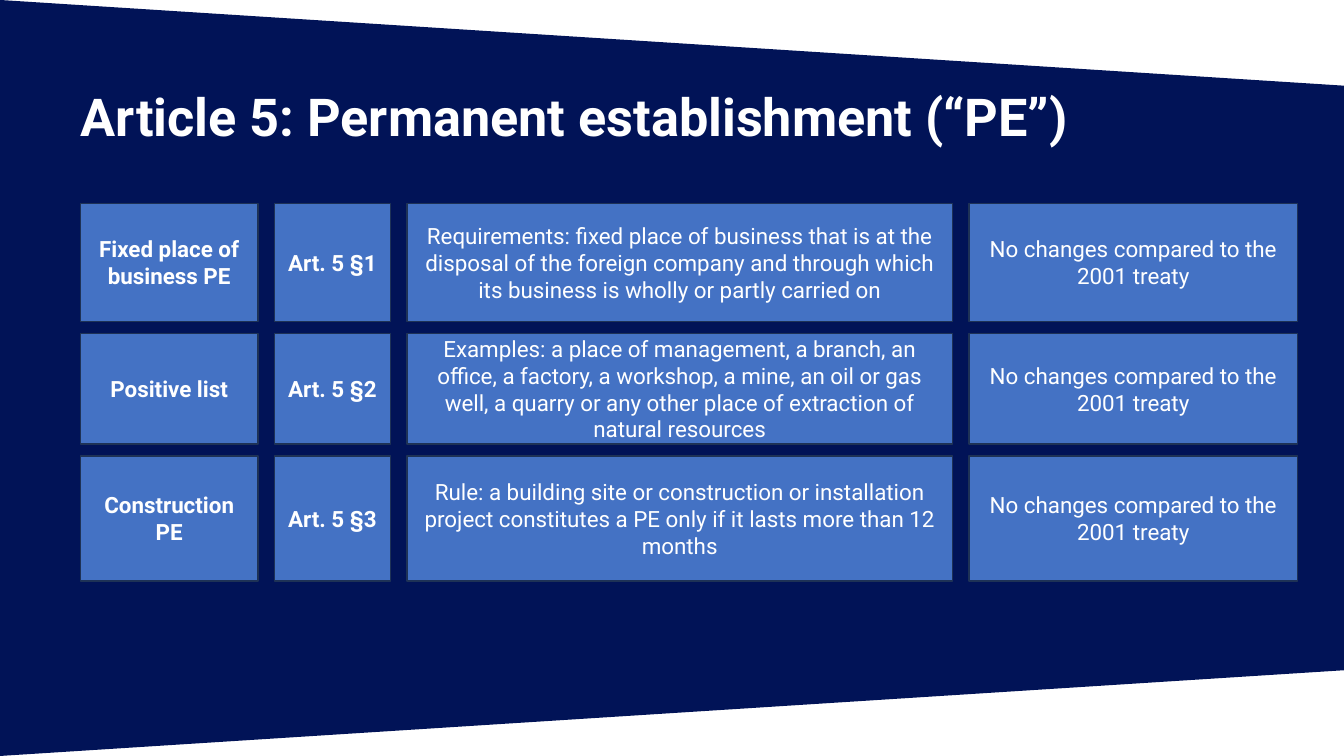
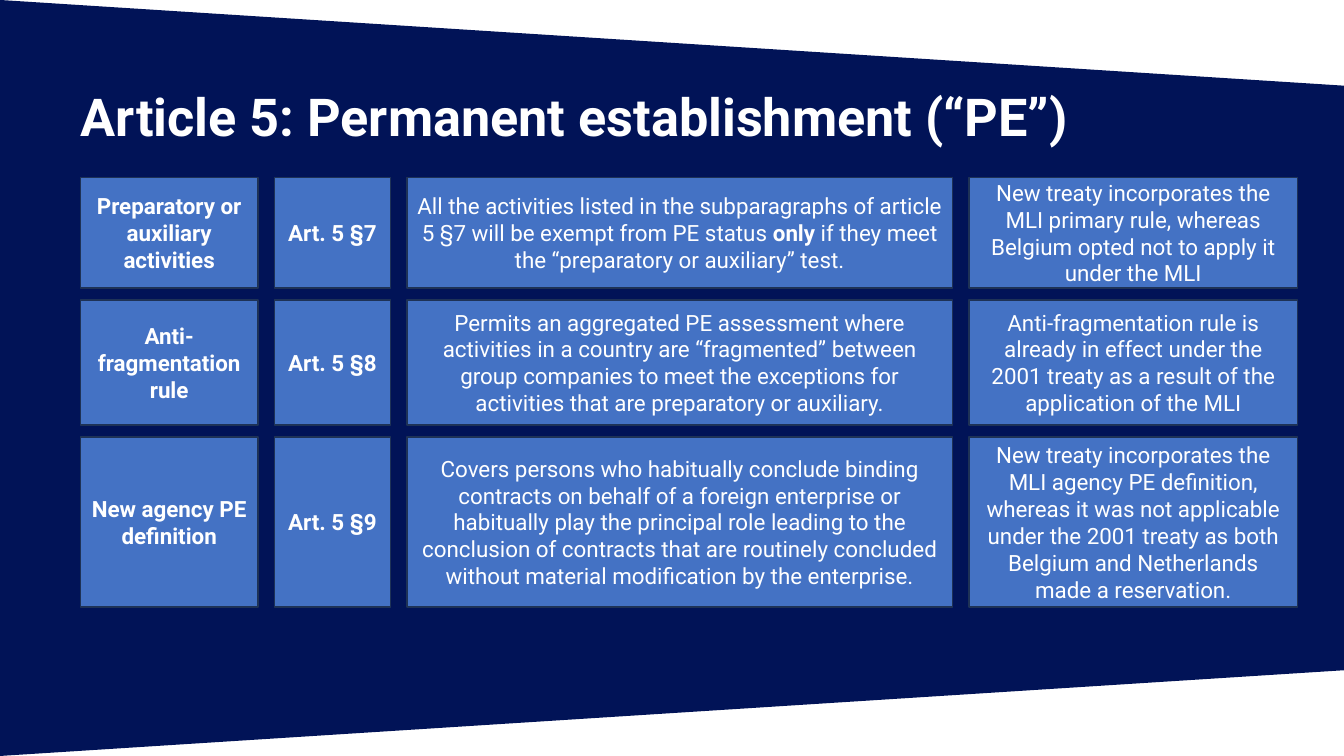
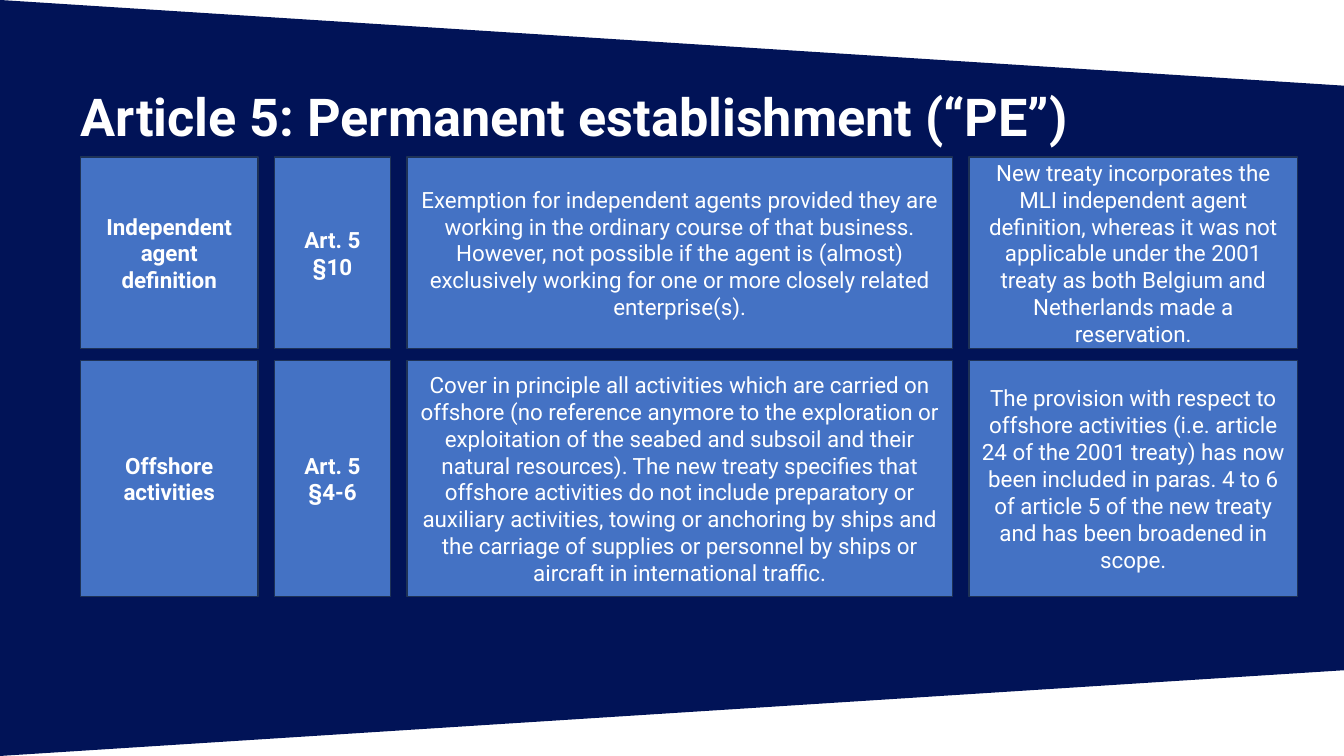
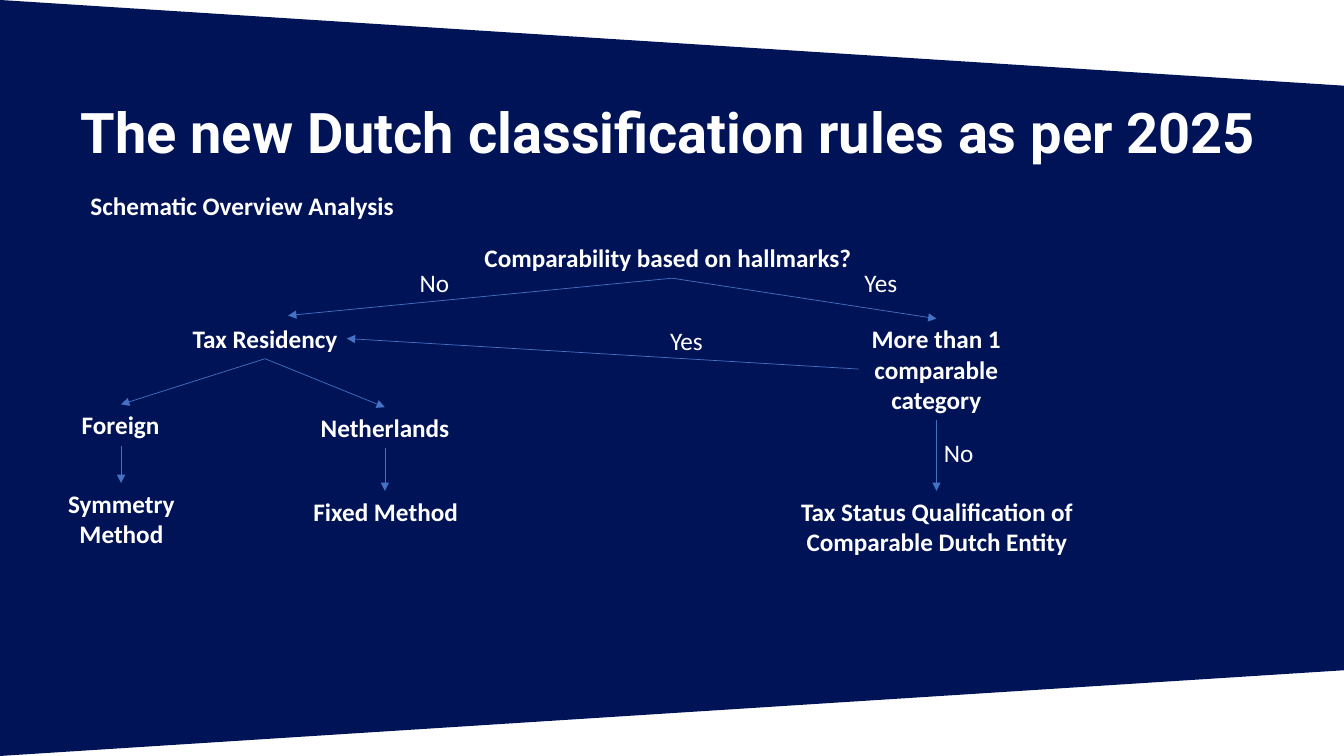
from dataclasses import dataclass

from pptx import Presentation
from pptx.dml.color import RGBColor as RGB
from pptx.enum.shapes import MSO_CONNECTOR as CONN, MSO_SHAPE as SHAPE
from pptx.enum.text import MSO_ANCHOR as ANCHOR, MSO_AUTO_SIZE as FIT, PP_ALIGN as ALIGN
from pptx.oxml.ns import qn
from pptx.oxml.xmlchemy import OxmlElement
from pptx.util import Cm, Pt


@dataclass
class Theme:
    navy = RGB.from_string("011357")
    blue = RGB.from_string("4472C4")
    edge = RGB.from_string("1E3256")
    white = RGB.from_string("FFFFFF")
    font = "Roboto"
    chart_font = "Calibri"
    article_title = 37.3
    rules_title = 40
    title_line = 40
    cell = 16
    label = 18


theme = Theme()


def write(sp, text, size=theme.cell, font=theme.font, bold=False, align=ALIGN.CENTER,
          anchor=ANCHOR.MIDDLE, line=None, inset=None):
    tf = sp.text_frame
    tf.word_wrap = True
    tf.auto_size = FIT.NONE
    tf.vertical_anchor = anchor
    if inset is not None:
        tf.margin_left = tf.margin_right = tf.margin_top = tf.margin_bottom = inset
    p = tf.paragraphs[0]
    p.alignment = align
    if line:
        p.line_spacing = Pt(line)
    for i, part in enumerate(text.split("**")):
        r = p.add_run()
        r.text = part
        r.font.name = font
        r.font.size = Pt(size)
        r.font.bold = bold or i % 2 == 1
        r.font.color.rgb = theme.white


def add_slide(title, size, top):
    s = prs.slides.add_slide(layout)
    sp = s.shapes.title
    sp.left, sp.top, sp.width, sp.height = Cm(2.03), Cm(top), Cm(30.66), Cm(3.68)
    write(sp, title, size=size, bold=True, align=ALIGN.LEFT, anchor=ANCHOR.BOTTOM,
          line=theme.title_line, inset=0)
    return s


prs = Presentation()
prs.slide_width, prs.slide_height = Cm(33.87), Cm(19.05)
layout = prs.slide_layouts[5]

unchanged = "No changes compared to the 2001 treaty"
article_slides = [
    (5.13, [
        (2.97, "Fixed place of business PE", "Art. 5 §1",
         "Requirements: fixed place of business that is at the disposal of the foreign company "
         "and through which its business is wholly or partly carried on",
         unchanged),
        (2.79, "Positive list", "Art. 5 §2",
         "Examples: a place of management, a branch, an office, a factory, a workshop, a mine, "
         "an oil or gas well, a quarry or any other place of extraction of natural resources",
         unchanged),
        (3.15, "Construction PE", "Art. 5 §3",
         "Rule: a building site or construction or installation project constitutes a PE only "
         "if it lasts more than 12 months",
         unchanged),
    ]),
    (4.47, [
        (2.79, "Preparatory or auxiliary activities", "Art. 5 §7",
         "All the activities listed in the subparagraphs of article 5 §7 will be exempt from PE "
         "status **only** if they meet the “preparatory or auxiliary” test.",
         "New treaty incorporates the MLI primary rule, whereas Belgium opted not to apply it "
         "under the MLI"),
        (3.15, "Anti-fragmentation rule", "Art. 5 §8",
         "Permits an aggregated PE assessment where activities in a country are “fragmented” "
         "between group companies to meet the exceptions for activities that are preparatory "
         "or auxiliary.",
         "Anti-fragmentation rule is already in effect under the 2001 treaty as a result of the "
         "application of the MLI"),
        (4.29, "New agency PE definition", "Art. 5 §9",
         "Covers persons who habitually conclude binding contracts on behalf of a foreign "
         "enterprise or habitually play the principal role leading to the conclusion of "
         "contracts that are routinely concluded without material modification by the "
         "enterprise.",
         "New treaty incorporates the MLI agency PE definition, whereas it was not applicable "
         "under the 2001 treaty as both Belgium and Netherlands made a reservation."),
    ]),
    (3.96, [
        (4.83, "Independent agent definition", "Art. 5 §10",
         "Exemption for independent agents provided they are working in the ordinary course of "
         "that business. However, not possible if the agent is (almost) exclusively working "
         "for one or more closely related enterprise(s).",
         "New treaty incorporates the MLI independent agent definition, whereas it was not "
         "applicable under the 2001 treaty as both Belgium and Netherlands made a reservation."),
        (5.94, "Offshore activities", "Art. 5 §4-6",
         "Cover in principle all activities which are carried on offshore (no reference anymore "
         "to the exploration or exploitation of the seabed and subsoil and their natural "
         "resources). The new treaty specifies that offshore activities do not include "
         "preparatory or auxiliary activities, towing or anchoring by ships and the carriage of "
         "supplies or personnel by ships or aircraft in international traffic.",
         "The provision with respect to offshore activities (i.e. article 24 of the 2001 treaty) "
         "has now been included in paras. 4 to 6 of article 5 of the new treaty and has been "
         "broadened in scope."),
    ]),
]
col_widths = [4.47, 2.92, 13.74, 8.28]
col_gap, row_gap = 0.42, 0.3

for top, rows in article_slides:
    s = add_slide("Article 5: Permanent establishment (“PE”)", theme.article_title, 0.03)
    for height, *cells in rows:
        left = 2.03
        for col, (width, text) in enumerate(zip(col_widths, cells)):
            sp = s.shapes.add_shape(SHAPE.RECTANGLE, Cm(left), Cm(top), Cm(width), Cm(height))
            sp.shadow.inherit = False
            sp.fill.solid()
            sp.fill.fore_color.rgb = theme.blue
            sp.line.color.rgb = theme.edge
            sp.line.width = Pt(1)
            write(sp, text, bold=col < 2)
            left += width + col_gap
        top += height + row_gap

s = add_slide("The new Dutch classification rules as per 2025", theme.rules_title, 0.46)

arrows = [
    (16.94, 7.01, 7.26, 7.95),
    (16.94, 7.01, 23.6, 8.03),
    (21.64, 9.3, 8.74, 8.53),
    (6.68, 9.04, 3.05, 10.19),
    (6.68, 9.04, 9.7, 10.26),
    (3.05, 11.23, 3.05, 12.17),
    (9.7, 11.28, 9.7, 12.37),
    (23.6, 10.59, 23.6, 12.37),
]
for points in arrows:
    c = s.shapes.add_connector(CONN.STRAIGHT, *[Cm(v) for v in points])
    c.line.color.rgb = theme.blue
    c.line.width = Pt(0.5)
    tip = OxmlElement("a:tailEnd")
    tip.set("type", "triangle")
    c.element.spPr.find(qn("a:ln")).append(tip)
    c.element.spPr.append(OxmlElement("a:effectLst"))

labels = [
    ("Schematic Overview Analysis", 2.03, 4.67, 26.09, 1.02, True, ALIGN.LEFT),
    ("Comparability based on hallmarks?", 11.96, 5.99, 9.96, 1.02, True, ALIGN.LEFT),
    ("No", 9.78, 6.6, 2.34, 1.02, False, ALIGN.CENTER),
    ("Yes", 21.03, 6.6, 2.34, 1.02, False, ALIGN.CENTER),
    ("Tax Residency", 1.7, 8.03, 9.96, 1.02, True, ALIGN.CENTER),
    ("Yes", 16.13, 8.08, 2.34, 1.02, False, ALIGN.CENTER),
    ("More than 1 comparable category", 21.64, 8.03, 3.91, 2.57, True, ALIGN.CENTER),
    ("Foreign", 1.45, 10.19, 3.18, 1.02, True, ALIGN.CENTER),
    ("Netherlands", 7.75, 10.26, 3.91, 1.02, True, ALIGN.CENTER),
    ("No", 22.99, 10.9, 2.34, 1.02, False, ALIGN.CENTER),
    ("Symmetry Method", 0.76, 12.17, 4.6, 1.8, True, ALIGN.CENTER),
    ("Fixed Method", 7.42, 12.37, 4.6, 1.02, True, ALIGN.CENTER),
    ("Tax Status Qualification of Comparable Dutch Entity", 19.13, 12.37, 8.97, 1.8, True,
     ALIGN.CENTER),
]
for text, left, top, width, height, bold, align in labels:
    sp = s.shapes.add_textbox(Cm(left), Cm(top), Cm(width), Cm(height))
    write(sp, text, size=theme.label, font=theme.chart_font, bold=bold, align=align,
          anchor=ANCHOR.TOP)

outline = s.shapes.build_freeform(0, 0)
outline.add_line_segments([
    (prs.slide_width, Cm(2.16)),
    (prs.slide_width, Cm(16.89)),
    (0, prs.slide_height),
])
band = outline.convert_to_shape()
band.shadow.inherit = False
band.fill.solid()
band.fill.fore_color.rgb = theme.navy
band.line.fill.background()
band.element.nvSpPr.cNvPr.id = 100
layout.shapes.element.insert(2, band.element)

prs.save("out.pptx")
